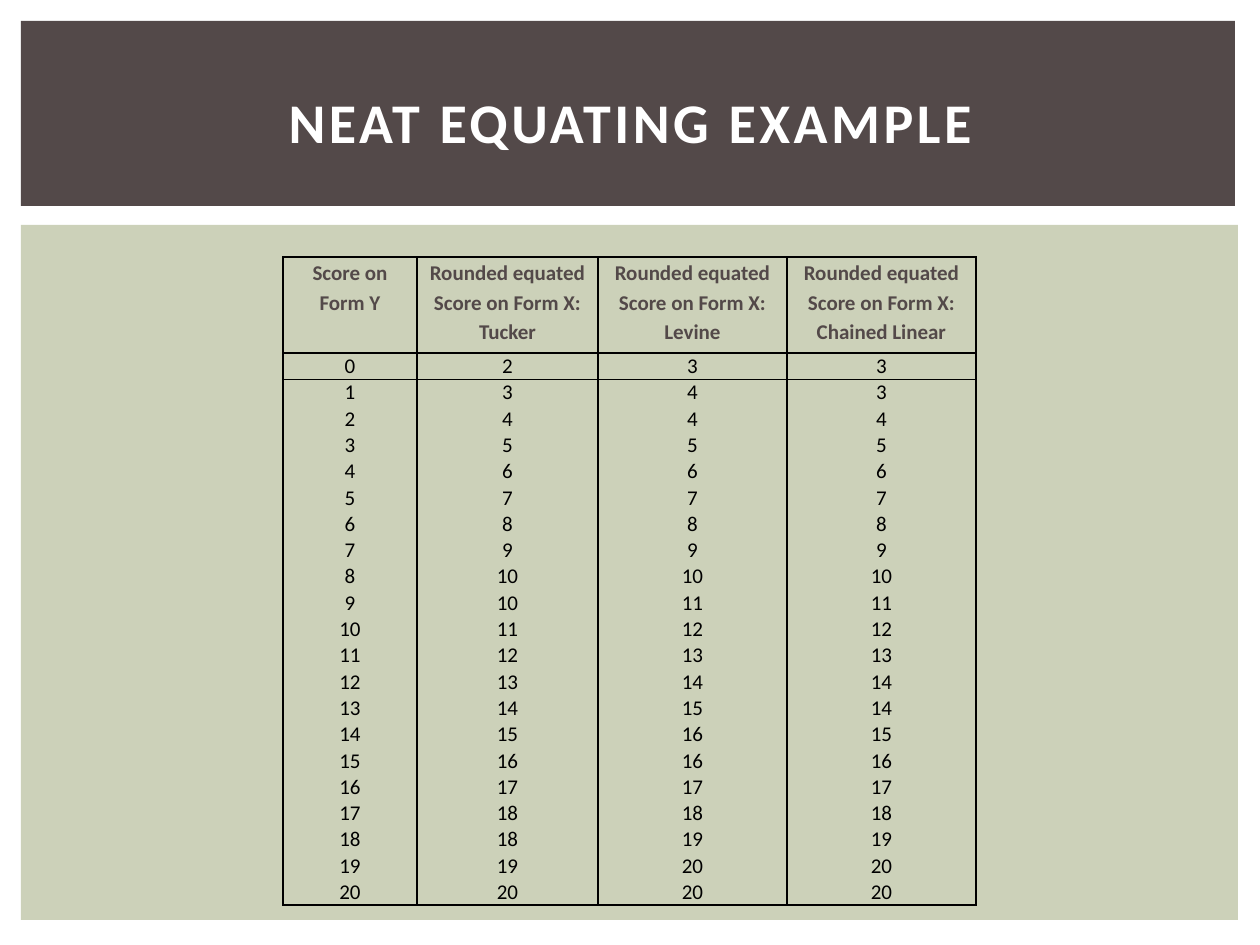
from lxml import etree
from pptx import Presentation
from pptx import util as u
from pptx.dml.color import RGBColor
from pptx.enum import shapes, text
from pptx.oxml.ns import qn

EMU_PER_PX = 914400 / 126
FONT = "Calibri"
COLORS = {
    "panel": "CCD1B9",
    "banner": "534949",
    "title": "FFFFFF",
    "header": "534949",
    "body": "000000",
    "border": "000000",
}
NO_STYLE = "{2D5ABB26-0587-4C30-8999-92F81FD0307C}"

# Table content: each header cell is a list of paragraphs
HEADERS = [
    ["Score on Form Y"],
    ["Rounded equated Score on Form X: Tucker"],
    ["Rounded equated Score on Form X:", "Levine"],
    ["Rounded equated Score on Form X:", "Chained Linear"],
]
FORM_Y = range(21)
TUCKER = [2, 3, 4, 5, 6, 7, 8, 9, 10, 10, 11, 12, 13, 14, 15, 16, 17, 18, 18, 19, 20]
LEVINE = [3, 4, 4, 5, 6, 7, 8, 9, 10, 11, 12, 13, 14, 15, 16, 16, 17, 18, 19, 20, 20]
CHAINED = [3, 3, 4, 5, 6, 7, 8, 9, 10, 11, 12, 13, 14, 14, 15, 16, 17, 18, 19, 20, 20]

COLUMN_WIDTHS = [134, 181, 189, 189]
HEADER_HEIGHT = 96
BODY_HEIGHT = 553


def px(value):
    return u.Emu(round(value * EMU_PER_PX))


def color(name):
    return RGBColor.from_string(COLORS[name])


def add_panel(slide, box, fill):
    shape = slide.shapes.add_shape(
        shapes.MSO_SHAPE.RECTANGLE, *[px(value) for value in box])
    shape.shadow.inherit = False
    shape.fill.solid()
    shape.fill.fore_color.rgb = color(fill)
    shape.line.fill.background()


def add_run(paragraph, words, size, fill, bold=False):
    paragraph.alignment = text.PP_ALIGN.CENTER
    run = paragraph.add_run()
    run.text = words
    run.font.name = FONT
    run.font.size = u.Pt(size)
    run.font.bold = bold
    run.font.color.rgb = color(fill)
    return run


def add_title(slide, box, words):
    shape = slide.shapes.add_textbox(*[px(value) for value in box])
    frame = shape.text_frame
    frame.word_wrap = True
    frame.vertical_anchor = text.MSO_ANCHOR.MIDDLE
    run = add_run(frame.paragraphs[0], words, 32, "title", bold=True)
    run.font._element.set("spc", "200")


def set_borders(cell, sides):
    properties = cell._tc.get_or_add_tcPr()
    for side in "LRTB":
        if side in sides:
            line = etree.SubElement(properties, qn(f"a:ln{side}"), w=str(u.Pt(1)))
            fill = etree.SubElement(line, qn("a:solidFill"))
            etree.SubElement(fill, qn("a:srgbClr"), val=COLORS["border"])


def fill_cell(cell, paragraphs, header, sides):
    side_margin = px(9 if header else 1)
    cell.margin_left = cell.margin_right = side_margin
    cell.margin_top = cell.margin_bottom = 0
    cell.vertical_anchor = text.MSO_ANCHOR.TOP if header else text.MSO_ANCHOR.BOTTOM
    frame = cell.text_frame
    for index, words in enumerate(paragraphs):
        paragraph = frame.add_paragraph() if index else frame.paragraphs[0]
        if header:
            paragraph.line_spacing = 1.15
        add_run(paragraph, words, 12, "header" if header else "body", bold=header)
    set_borders(cell, sides)
    cell.fill.background()


def add_score_table(slide, left, top):
    scores = list(zip(FORM_Y, TUCKER, LEVINE, CHAINED))
    rows = [HEADERS] + [[[str(score)] for score in row] for row in scores]
    frame = slide.shapes.add_table(
        len(rows), len(HEADERS), px(left), px(top),
        px(sum(COLUMN_WIDTHS)), px(HEADER_HEIGHT + BODY_HEIGHT))
    table = frame.table
    table.horz_banding = False
    table._tbl.tblPr.find(qn("a:tableStyleId")).text = NO_STYLE
    for column, width in zip(table.columns, COLUMN_WIDTHS):
        column.width = px(width)

    # Boxed header, then open rows closed by a line under the last one
    last = len(rows) - 1
    for index, row in enumerate(rows):
        header = index == 0
        table.rows[index].height = px(HEADER_HEIGHT if header else BODY_HEIGHT / last)
        sides = "LR"
        if index <= 1:
            sides += "T"
        if index in (0, last):
            sides += "B"
        for column, paragraphs in enumerate(row):
            fill_cell(table.cell(index, column), paragraphs, header, sides)


def main():
    presentation = Presentation()
    presentation.slide_width = px(1260)
    presentation.slide_height = px(945)
    slide = presentation.slides.add_slide(presentation.slide_layouts[6])

    # Background panels
    add_panel(slide, (21, 225, 1217, 695), "panel")
    add_panel(slide, (21, 21, 1214, 185), "banner")

    # Title and score table
    add_title(slide, (53, 49, 1155, 145), "NEAT EQUATING EXAMPLE")
    add_score_table(slide, 283, 257)

    presentation.save("out.pptx")


if __name__ == "__main__":
    main()
